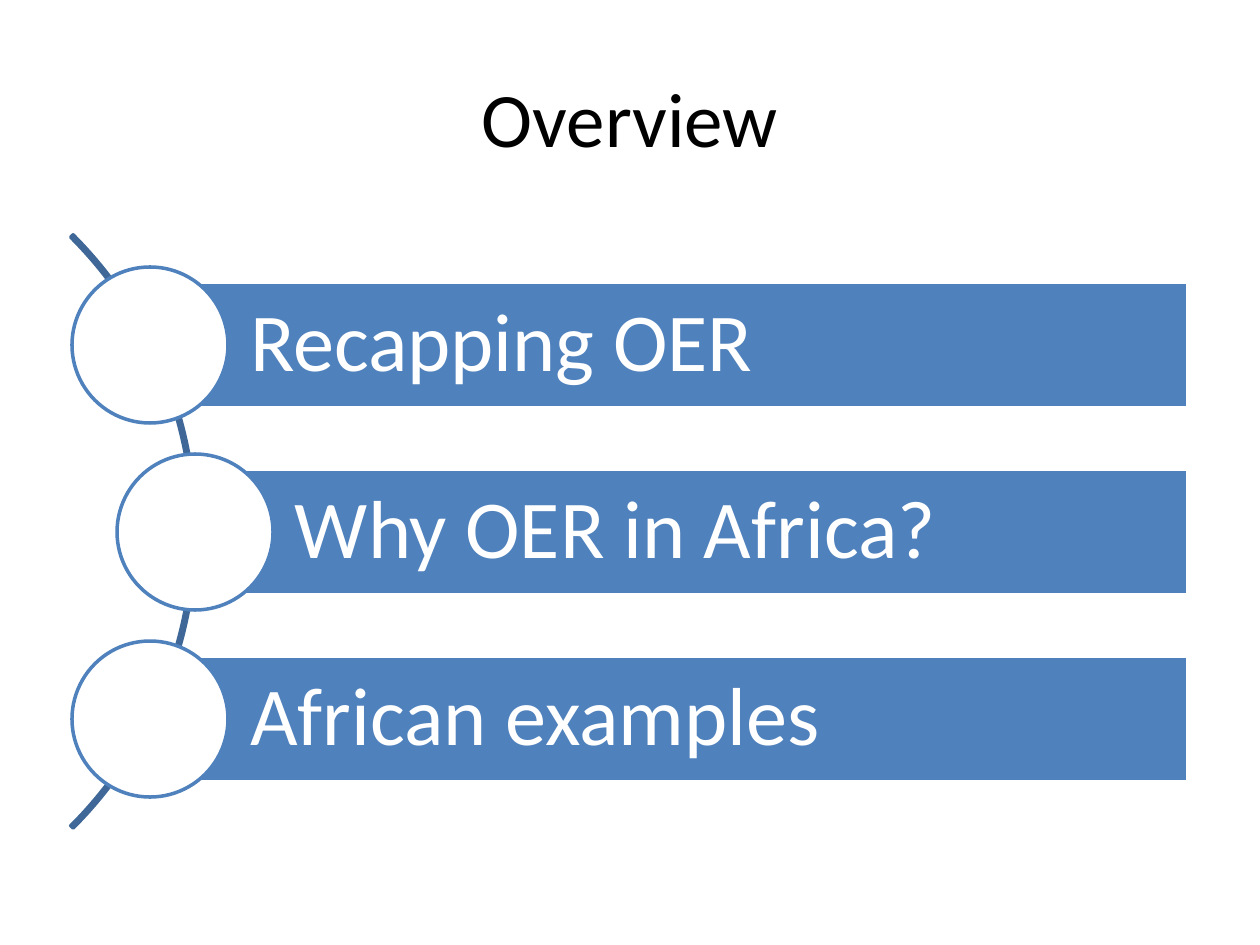
import pptx
import pptx.util
import pptx.dml.color
import pptx.enum.shapes
import pptx.enum.text

WHITE = pptx.dml.color.RGBColor(0xFF, 0xFF, 0xFF)
BLACK = pptx.dml.color.RGBColor(0x00, 0x00, 0x00)
BLUE = pptx.dml.color.RGBColor(0x4F, 0x81, 0xBD)
DARK_BLUE = pptx.dml.color.RGBColor(0x3F, 0x67, 0x97)

SHAPES = pptx.enum.shapes.MSO_SHAPE
ALIGN = pptx.enum.text.PP_ALIGN
MIDDLE = pptx.enum.text.MSO_ANCHOR.MIDDLE

PIXELS_PER_INCH = 126
CIRCLE_SIZE = 156
BAR_HEIGHT = 125
BAR_RIGHT = 1188
FIRST_CENTER = 345
ROW_PITCH = 187
ITEMS = [
    ("Recapping OER", 150),
    ("Why OER in Africa?", 195),
    ("African examples", 150),
]


def px(length):
    return pptx.util.Inches(length / PIXELS_PER_INCH)


class SlideBuilder:
    """Holds the text style and the slide being filled."""

    def __init__(self, slide, font_name):
        self.slide = slide
        self.font_name = font_name

    def set_text(self, shape, text, size, color, alignment):
        frame = shape.text_frame
        frame.word_wrap = True
        frame.vertical_anchor = MIDDLE
        frame.text = text
        paragraph = frame.paragraphs[0]
        paragraph.alignment = alignment
        paragraph.font.name = self.font_name
        paragraph.font.size = pptx.util.Pt(size)
        paragraph.font.color.rgb = color
        return paragraph

    def title(self, text, left, top, width, height):
        title = self.slide.shapes.title
        title.left, title.top = px(left), px(top)
        title.width, title.height = px(width), px(height)
        self.set_text(title, text, 44, BLACK, ALIGN.CENTER)

    def shape(self, kind, left, top, width, height, fill, line):
        shape = self.slide.shapes.add_shape(
            kind, px(left), px(top), px(width), px(height))
        shape.shadow.inherit = False
        if fill is None:
            shape.fill.background()
        else:
            shape.fill.solid()
            shape.fill.fore_color.rgb = fill
        shape.line.color.rgb = line
        shape.line.width = pptx.util.Pt(2)
        return shape

    def arc(self, left, top, size):
        """Draw the thin arc from 315 to 45 degrees."""
        arc = self.shape(SHAPES.BLOCK_ARC, left, top, size, size, None, DARK_BLUE)
        for index, value in enumerate((189, 27, 0.004)):
            arc.adjustments[index] = value

    def item(self, text, center_x, center_y):
        """Draw a bar that starts at the centre of its circle."""
        bar = self.shape(SHAPES.RECTANGLE, center_x, center_y - BAR_HEIGHT / 2,
                         BAR_RIGHT - center_x, BAR_HEIGHT, BLUE, WHITE)
        paragraph = self.set_text(bar, text, 47, WHITE, ALIGN.LEFT)
        paragraph.line_spacing = 0.9
        frame = bar.text_frame
        frame.margin_left = px(100)
        frame.margin_top = frame.margin_right = frame.margin_bottom = px(16)
        self.shape(SHAPES.OVAL, center_x - CIRCLE_SIZE / 2, center_y - CIRCLE_SIZE / 2,
                   CIRCLE_SIZE, CIRCLE_SIZE, WHITE, BLUE)


def main():
    presentation = pptx.Presentation()
    presentation.slide_width = px(1260)
    presentation.slide_height = px(945)
    title_only = presentation.slide_layouts[5]
    builder = SlideBuilder(presentation.slides.add_slide(title_only), "Calibri")

    builder.title("Overview", 63, 38, 1134, 158)
    builder.arc(-643, 112, 839)
    for row, (text, center_x) in enumerate(ITEMS):
        builder.item(text, center_x, FIRST_CENTER + row * ROW_PITCH)

    presentation.save("out.pptx")


if __name__ == "__main__":
    main()
